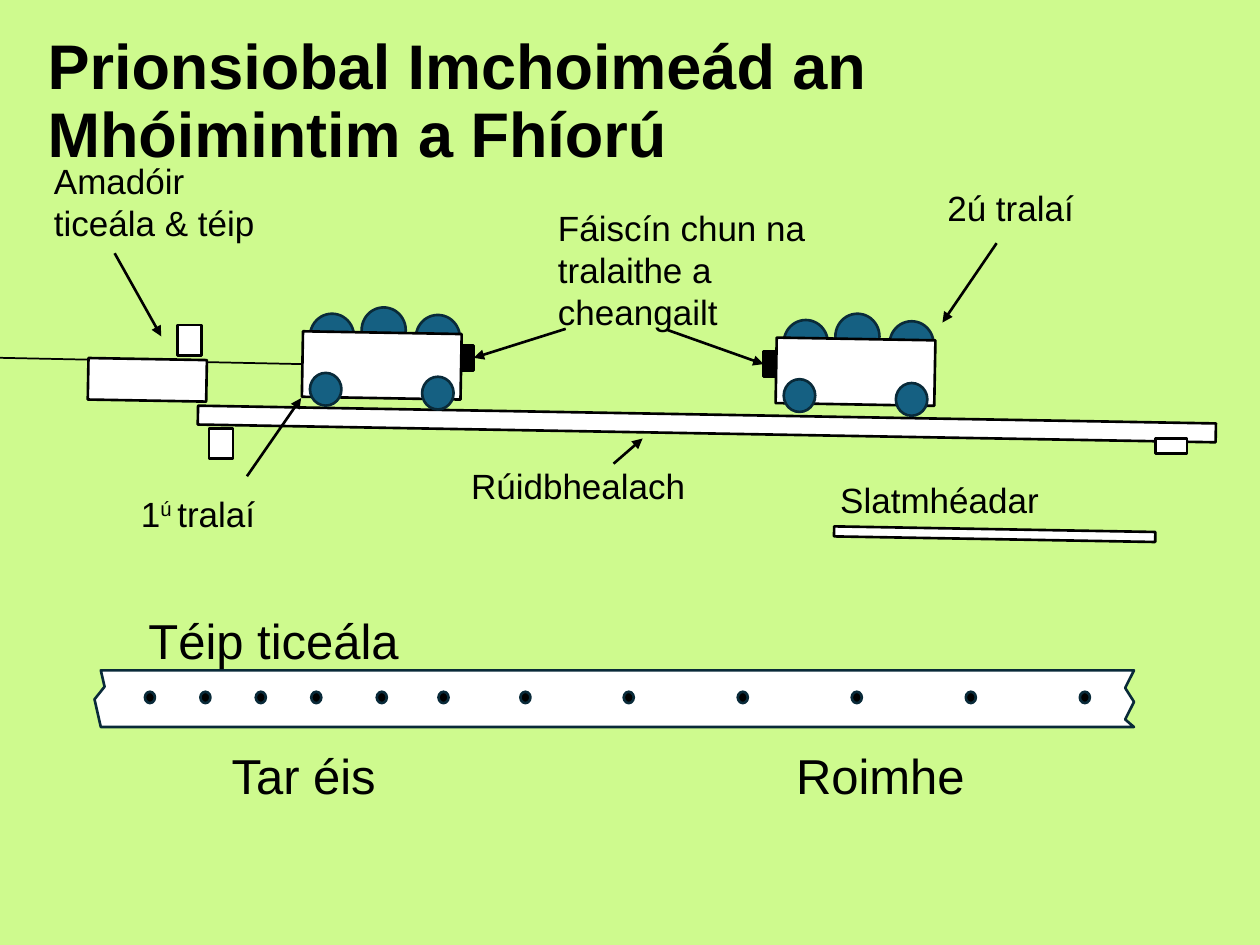
from lxml import etree
from pptx import Presentation
from pptx.dml.color import RGBColor
from pptx.enum.shapes import MSO_CONNECTOR as Conn, MSO_SHAPE as Kind
from pptx.enum.text import MSO_ANCHOR as Anchor
from pptx.oxml.ns import qn
from pptx.util import Inches, Pt

BLACK, WHITE, BLUE, NAVY, LIME = "000000", "FFFFFF", "156082", "092A39", "CEFA8E"
BODY = {"size": Pt(20), "name": "Arial"}
LARGE = {"size": Pt(28), "name": "Arial"}
HEAD = {"size": Pt(36), "name": "Arial", "bold": True}


def tint(hue):
    return RGBColor.from_string(hue)


def paint(shape, fill, line):
    shape.shadow.inherit = False
    shape.fill.solid()
    shape.fill.fore_color.rgb = tint(fill)
    shape.line.color.rgb = tint(line)
    shape.line.width = Pt(1.5)


def draw(slide, kind, x, y, w, h, fill=WHITE, line=BLACK, turn=0):
    shape = slide.shapes.add_shape(kind, Inches(x), Inches(y), Inches(w), Inches(h))
    shape.rotation = turn
    paint(shape, fill, line)


def rule(slide, start, end, width=1.5, arrow=True):
    ends = [Inches(v) for v in (*start, *end)]
    line = slide.shapes.add_connector(Conn.STRAIGHT, *ends)
    line.line.color.rgb = tint(BLACK)
    line.line.width = Pt(width)
    if arrow:
        tail = etree.SubElement(line.line._get_or_add_ln(), qn("a:tailEnd"))
        tail.set("type", "triangle")
    etree.SubElement(line._element.spPr, qn("a:effectLst"))


def write(slide, text, x, y, w, h, style=BODY, wrap=True, raised=""):
    """Add a text box; the part of the text equal to raised is superscript."""
    box = slide.shapes.add_textbox(Inches(x), Inches(y), Inches(w), Inches(h))
    frame = box.text_frame
    frame.word_wrap = wrap
    para = frame.paragraphs[0]
    parts = text.partition(raised) if raised else [text]
    for part in parts:
        run = para.add_run()
        run.text = part
        run.font.color.rgb = tint(BLACK)
        for key, value in style.items():
            setattr(run.font, key, value)
        if part == raised:
            run.font._element.set("baseline", "30000")
    return box


def add_title(slide, x, y, w, h):
    text = "Prionsiobal Imchoimeád an Mhóimintim a Fhíorú"
    frame = write(slide, text, x, y, w, h, HEAD).text_frame
    frame.vertical_anchor = Anchor.MIDDLE
    frame.paragraphs[0].line_spacing = 0.9


def add_cart(slide, x, y, pad):
    """Draw a loaded trolley with its body at x, y and its fastener at offset pad."""
    for dx, dy in ((0.06, -0.15), (0.47, -0.2), (0.9, -0.14)):
        draw(slide, Kind.OVAL, x + dx, y + dy, 0.35, 0.36, BLUE, NAVY)
    draw(slide, Kind.RECTANGLE, x, y, 1.26, 0.52, turn=1)
    for dx, dy in ((0.06, 0.32), (0.95, 0.35)):
        draw(slide, Kind.OVAL, x + dx, y + dy, 0.25, 0.26, BLUE, NAVY)
    draw(slide, Kind.RECTANGLE, x + pad, y + 0.1, 0.1, 0.2, BLACK)


def add_track(slide, x, y):
    """Draw the runway, its supports, the ticker timer, the metre stick and both trolleys."""
    draw(slide, Kind.RECTANGLE, x + 1.57, y + 0.85, 8.08, 0.15, turn=1)
    draw(slide, Kind.RECTANGLE, x + 1.66, y + 0.96, 0.19, 0.24)
    draw(slide, Kind.RECTANGLE, x + 9.17, y + 1.04, 0.25, 0.12)
    add_cart(slide, x + 2.4, y + 0.2, 1.26)
    add_cart(slide, x + 6.16, y + 0.25, -0.1)
    rule(slide, (x + 2.4, y + 0.45), (x, y + 0.4), 1, False)
    draw(slide, Kind.RECTANGLE, x + 0.7, y + 0.41, 0.94, 0.33, turn=1)
    draw(slide, Kind.RECTANGLE, x + 1.41, y + 0.14, 0.19, 0.24)
    draw(slide, Kind.RECTANGLE, x + 6.62, y + 1.76, 2.55, 0.08, turn=1)


def add_labels(slide, x, y):
    """Name the parts of the apparatus and point at them."""
    for text, dx, dy, w, h, wrap, raised in (
        ("Amadóir ticeála & téip", 0.33, 0, 2.06, 0.77, True, ""),
        ("Fáiscín chun na tralaithe a cheangailt", 4.33, 0.37, 2.33, 1.11, True, ""),
        ("2ú tralaí", 7.42, 0.21, 1.21, 0.44, False, ""),
        ("1ú tralaí", 1.02, 2.64, 1.14, 0.44, False, "ú "),
        ("Rúidbhealach", 3.64, 2.42, 2.5, 0.44, True, ""),
        ("Slatmhéadar", 6.57, 2.53, 1.83, 0.44, True, ""),
    ):
        write(slide, text, x + dx, y + dy, w, h, wrap=wrap, raised=raised)
    for ax, ay, bx, by in (
        (0.91, 0.79, 1.28, 1.45),
        (4.49, 1.39, 3.76, 1.62),
        (5.3, 1.4, 6.06, 1.67),
        (7.91, 0.71, 7.48, 1.34),
        (1.96, 2.56, 2.39, 1.94),
        (4.87, 2.46, 5.1, 2.26),
    ):
        rule(slide, (x + ax, y + ay), (x + bx, y + by))


def add_tape(slide, x, y):
    """Draw the torn ticker tape with its dots and captions."""
    edge = [(8.25, 0), (0.05, 0), (0.08, 0.13), (0, 0.23), (0.05, 0.45),
            (8.25, 0.45), (8.18, 0.39), (8.25, 0.25), (8.18, 0.14)]
    spots = [(Inches(x + dx), Inches(y + dy)) for dx, dy in edge]
    form = slide.shapes.build_freeform(*spots[0])
    form.add_line_segments(spots[1:], close=True)
    paint(form.convert_to_shape(), WHITE, NAVY)
    close = [0.4 + 0.44 * i for i in range(4)]
    wide = [4.2 + 3.62 * i / 4 for i in range(5)]
    for dx in close + [2.24, 2.73, 3.38] + wide:
        draw(slide, Kind.OVAL, x + dx, y + 0.17, 0.08, 0.09, BLACK, NAVY)
    for text, dx, dy, w in (
        ("Téip ticeála", 0.33, -0.52, 2.21),
        ("Tar éis", 0.99, 0.55, 1.36),
        ("Roimhe", 5.47, 0.55, 1.56),
    ):
        write(slide, text, x + dx, y + dy, w, 0.57, LARGE, False)


def main():
    deck = Presentation()
    deck.slide_width, deck.slide_height = Inches(10), Inches(7.5)
    slide = deck.slides.add_slide(deck.slide_layouts[6])
    slide.background.fill.solid()
    slide.background.fill.fore_color.rgb = tint(LIME)
    add_track(slide, 0, 2.44)
    add_labels(slide, 0, 1.22)
    add_tape(slide, 0.75, 5.32)
    add_title(slide, 0.28, 0.22, 9.53, 1.19)
    deck.save("out.pptx")


if __name__ == "__main__":
    main()
